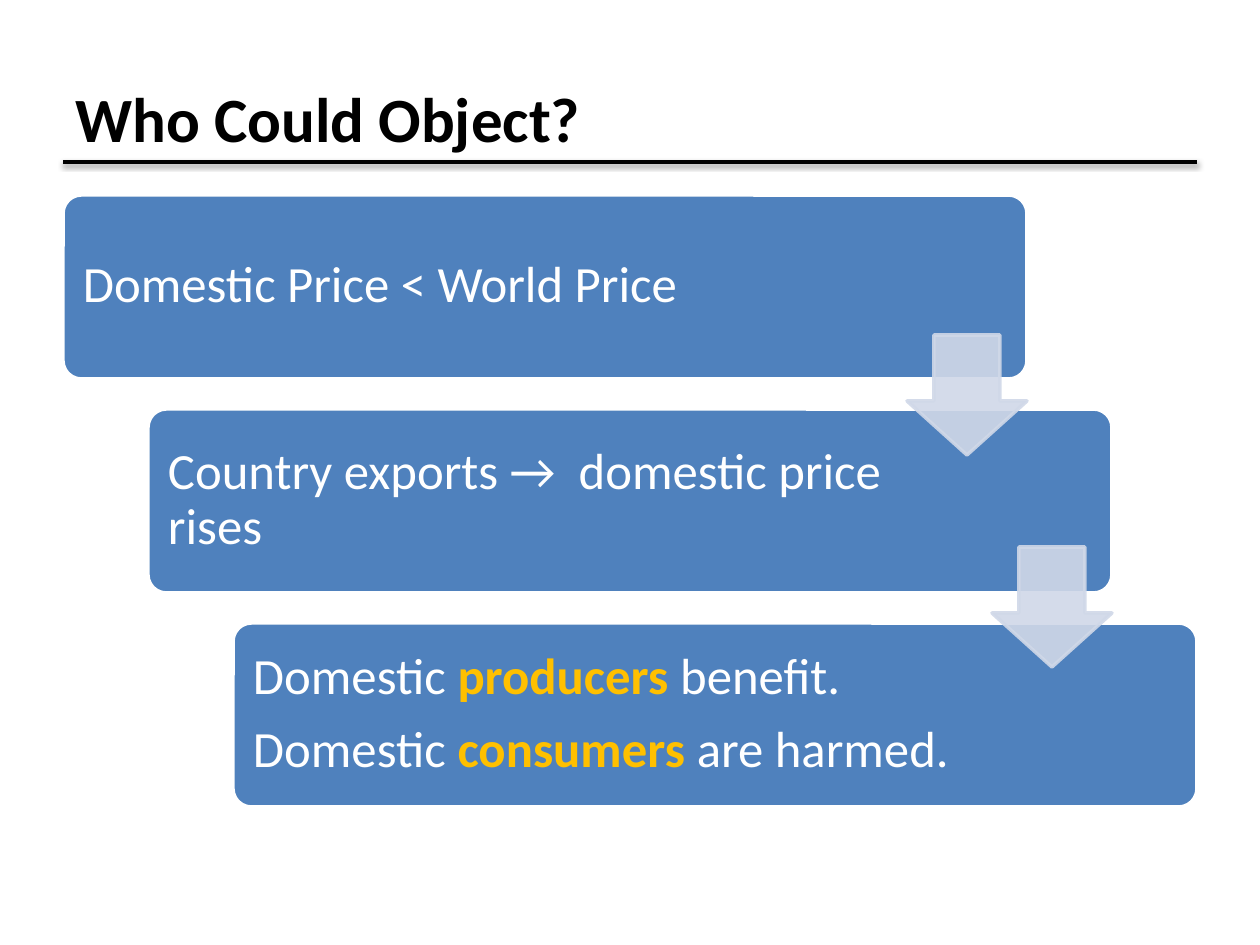
from lxml.etree import SubElement
from pptx import Presentation
from pptx.dml.color import RGBColor
from pptx.enum.shapes import MSO_CONNECTOR as CONNECTOR, MSO_SHAPE as SHAPE
from pptx.enum.text import MSO_ANCHOR as ANCHOR
from pptx.oxml.ns import qn
from pptx.util import Pt

PX = 914400 / 126
COLORS = {"ink": "000000", "white": "FFFFFF", "step": "4F81BD",
          "arrow": "D0D8E8", "accent": "FFC000"}


def px(*lengths):
    return [round(length * PX) for length in lengths]


def add_run(paragraph, text, size, color, bold=False):
    run = paragraph.add_run()
    run.text = text
    run.font.name = "Calibri"
    run.font.size = Pt(size)
    run.font.bold = bold
    run.font.color.rgb = RGBColor.from_string(COLORS[color])


prs = Presentation()
prs.slide_width, prs.slide_height = px(1260, 945)
slide = prs.slides.add_slide(prs.slide_layouts[6])
shapes = slide.shapes

rule = shapes.add_connector(CONNECTOR.STRAIGHT, *px(63, 162, 1197, 162))
rule.line.width = Pt(2)
rule.line.color.rgb = RGBColor.from_string(COLORS["ink"])
effects = SubElement(rule._element.spPr, qn("a:effectLst"))
shadow = SubElement(effects, qn("a:outerShdw"), blurRad="39370", dist="20320",
                    dir="5400000", rotWithShape="0")
shadow_color = SubElement(shadow, qn("a:srgbClr"), val=COLORS["ink"])
SubElement(shadow_color, qn("a:alpha"), val="38000")

title = shapes.add_textbox(*px(63, 38, 1134, 158)).text_frame
title.word_wrap = True
title.vertical_anchor = ANCHOR.MIDDLE
add_run(title.paragraphs[0], "Who Could Object?", 36, "ink", True)

steps = [
    (766, [[("Domestic Price < World Price", False)]]),
    (748, [[("Country exports →  domestic price rises", False)]]),
    (748, [[("Domestic ", False), ("producers", True), (" benefit.", False)],
           [("Domestic ", False), ("consumers", True), (" are harmed.", False)]]),
]
for index, (text_width, lines) in enumerate(steps):
    left, top = 63 + 85 * index, 195 + 214 * index
    step = shapes.add_shape(SHAPE.ROUNDED_RECTANGLE, *px(left, top, 964, 184))
    step.adjustments[0] = 0.1
    step.shadow.inherit = False
    step.fill.solid()
    step.fill.fore_color.rgb = RGBColor.from_string(COLORS["step"])
    step.line.width = Pt(2)
    step.line.color.rgb = RGBColor.from_string(COLORS["white"])

    label = shapes.add_textbox(*px(left + 5, top + 5, text_width, 173)).text_frame
    label.word_wrap = True
    label.vertical_anchor = ANCHOR.MIDDLE
    label.margin_left, label.margin_top, label.margin_right, label.margin_bottom = px(15, 15, 15, 15)
    for number, line in enumerate(lines):
        paragraph = label.add_paragraph() if number else label.paragraphs[0]
        paragraph.line_spacing = 0.9
        paragraph.space_after = Pt(10)
        for text, key in line:
            add_run(paragraph, text, 29, "accent" if key else "white", key)

for index in range(len(steps) - 1):
    arrow = shapes.add_shape(SHAPE.DOWN_ARROW, *px(907 + 85 * index, 335 + 212 * index, 120, 120))
    arrow.adjustments[0] = 0.55
    arrow.adjustments[1] = 0.45
    arrow.shadow.inherit = False
    arrow.fill.solid()
    arrow.line.width = Pt(2)
    arrow.fill.fore_color.rgb = RGBColor.from_string(COLORS["arrow"])
    arrow.line.color.rgb = RGBColor.from_string(COLORS["arrow"])
    for color in arrow._element.spPr.iter(qn("a:srgbClr")):
        SubElement(color, qn("a:alpha"), val="90000")

prs.save("out.pptx")
